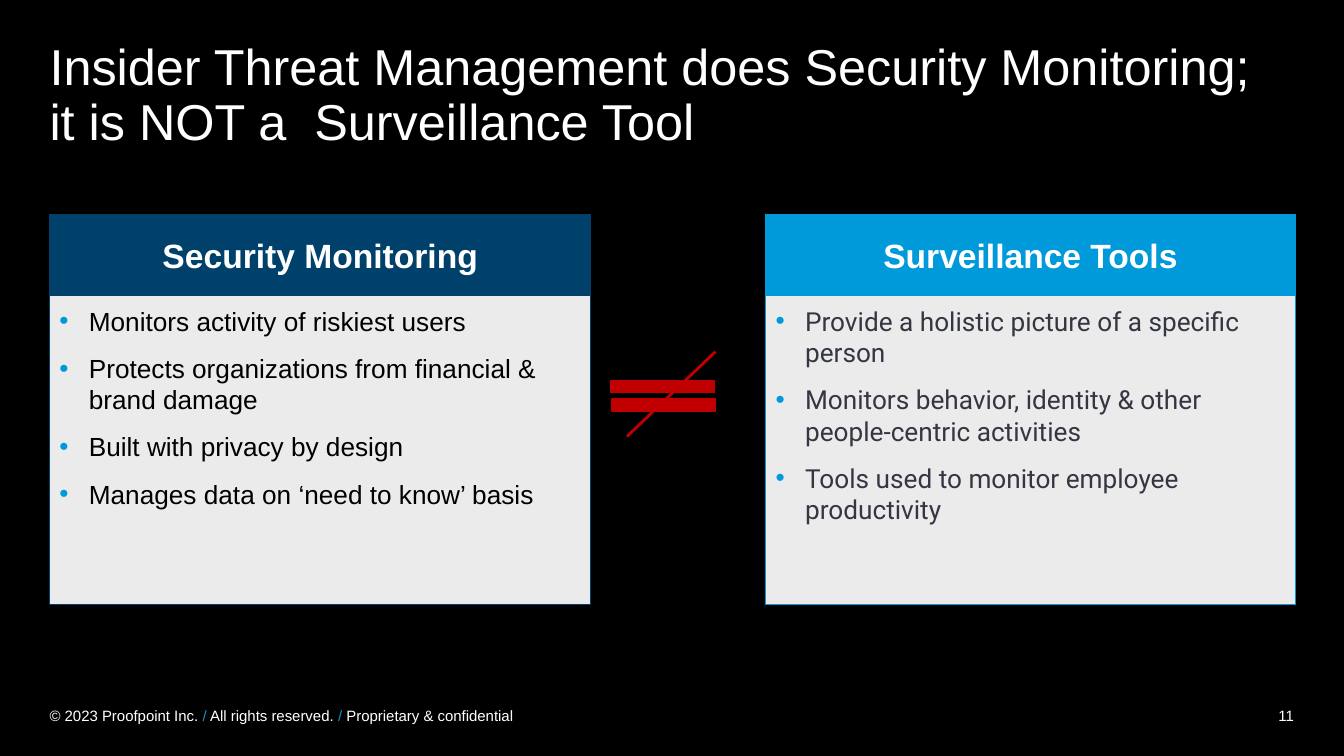
from dataclasses import dataclass

from lxml.etree import SubElement
from pptx import Presentation
from pptx.dml.color import RGBColor
from pptx.enum.shapes import MSO_CONNECTOR as Connector, MSO_SHAPE as Preset
from pptx.enum.text import MSO_ANCHOR as Anchor, PP_ALIGN as Align
from pptx.oxml.ns import qn
from pptx.shapes.autoshape import Shape
from pptx.slide import Slide
from pptx.text.text import TextFrame, _Paragraph as Paragraph
from pptx.util import Cm, Pt

COLORS = {
    "black": "000000",
    "white": "FFFFFF",
    "navy": "00416B",
    "blue": "009ADA",
    "slate": "343741",
    "red": "C00000",
}
MARGIN = 1.25
HEADER_TOP, HEADER_HEIGHT, BODY_HEIGHT = 5.41, 2.03, 7.8
FOOTER_TOP, FOOTER_HEIGHT = 17.73, 0.61
BULLET_INDENT = 0.74
PARAGRAPH_GAP = 11.2


@dataclass(frozen=True)
class Box:
    left: float
    top: float
    width: float
    height: float

    def lengths(self) -> tuple[Cm, Cm, Cm, Cm]:
        return Cm(self.left), Cm(self.top), Cm(self.width), Cm(self.height)


@dataclass(frozen=True)
class TextStyle:
    size: float
    color: str = "white"
    font: str = "Arial"
    bold: bool = False


@dataclass(frozen=True)
class Panel:
    left: float
    width: float
    color: str
    heading: str
    bullets: tuple[str, ...]
    bullet_style: TextStyle


TITLE = TextStyle(36)
HEADING = TextStyle(24, bold=True)
FOOTER = TextStyle(10.7)
FOOTER_ACCENT = TextStyle(10.7, "blue")

PANELS = (
    Panel(MARGIN, 13.64, "navy", "Security Monitoring", (
        "Monitors activity of riskiest users",
        "Protects organizations from financial & brand damage",
        "Built with privacy by design",
        "Manages data on ‘need to know’ basis",
    ), TextStyle(18.7, "black")),
    Panel(19.3, 13.34, "blue", "Surveillance Tools", (
        "Provide a holistic picture of a specific person",
        "Monitors behavior, identity & other people-centric activities",
        "Tools used to monitor employee productivity",
    ), TextStyle(18.7, "slate", "Roboto")),
)
EQUALS_BARS = (Box(15.39, 9.6, 2.62, 0.3), Box(15.42, 10.06, 2.62, 0.3))
FOOTER_RUNS = (
    ("© 2023 Proofpoint Inc. ", FOOTER),
    ("/", FOOTER_ACCENT),
    (" All rights reserved. ", FOOTER),
    ("/ ", FOOTER_ACCENT),
    ("Proprietary & confidential", FOOTER),
)


def rgb(name: str) -> RGBColor:
    return RGBColor.from_string(COLORS[name])


def add_run(paragraph: Paragraph, text: str, style: TextStyle) -> None:
    run = paragraph.add_run()
    run.text = text
    run.font.name = style.font
    run.font.size = Pt(style.size)
    run.font.bold = style.bold
    run.font.color.rgb = rgb(style.color)


def prepare_frame(frame: TextFrame, inset: float, anchor: Anchor) -> None:
    frame.word_wrap = True
    frame.vertical_anchor = anchor
    frame.margin_left = frame.margin_right = Cm(inset)
    frame.margin_top = frame.margin_bottom = Cm(inset)


def add_text(slide: Slide, box: Box, runs: tuple[tuple[str, TextStyle], ...],
             anchor: Anchor = Anchor.MIDDLE, align: Align = Align.LEFT) -> Paragraph:
    frame = slide.shapes.add_textbox(*box.lengths()).text_frame
    prepare_frame(frame, 0, anchor)
    paragraph = frame.paragraphs[0]
    paragraph.alignment = align
    for text, style in runs:
        add_run(paragraph, text, style)
    return paragraph


def add_rectangle(slide: Slide, box: Box, fill: str, line: str, line_width: float) -> Shape:
    shape = slide.shapes.add_shape(Preset.RECTANGLE, *box.lengths())
    shape.shadow.inherit = False
    shape.fill.solid()
    shape.fill.fore_color.rgb = rgb(fill)
    shape.line.color.rgb = rgb(line)
    shape.line.width = Pt(line_width)
    return shape


def set_opacity(shape: Shape, percent: int) -> None:
    color = shape.fill._xPr.find(qn("a:solidFill")).find(qn("a:srgbClr"))
    SubElement(color, qn("a:alpha"), val=str(percent * 1000))


def add_bullet(paragraph: Paragraph) -> None:
    properties = paragraph._p.get_or_add_pPr()
    properties.set("marL", str(Cm(BULLET_INDENT)))
    properties.set("indent", str(-Cm(BULLET_INDENT)))
    bullet_color = SubElement(properties, qn("a:buClr"))
    SubElement(bullet_color, qn("a:srgbClr"), val=COLORS["blue"])
    SubElement(properties, qn("a:buFont"), typeface="Arial")
    SubElement(properties, qn("a:buChar"), char="•")


def add_panel(slide: Slide, panel: Panel) -> None:
    header_box = Box(panel.left, HEADER_TOP, panel.width, HEADER_HEIGHT)
    header = add_rectangle(slide, header_box, panel.color, panel.color, 0.75)
    prepare_frame(header.text_frame, 0, Anchor.MIDDLE)
    heading = header.text_frame.paragraphs[0]
    heading.alignment = Align.CENTER
    add_run(heading, panel.heading, HEADING)

    body_box = Box(panel.left, HEADER_TOP + HEADER_HEIGHT, panel.width, BODY_HEIGHT)
    body = add_rectangle(slide, body_box, "white", panel.color, 0.75)
    set_opacity(body, 92)
    frame = body.text_frame
    prepare_frame(frame, 0.25, Anchor.TOP)
    for index, text in enumerate(panel.bullets):
        paragraph = frame.add_paragraph() if index else frame.paragraphs[0]
        add_bullet(paragraph)
        paragraph.alignment = Align.LEFT
        if index:
            paragraph.space_before = Pt(PARAGRAPH_GAP)
        add_run(paragraph, text, panel.bullet_style)


def add_not_equal_sign(slide: Slide) -> None:
    for bar in EQUALS_BARS:
        add_rectangle(slide, bar, "red", "red", 1)
    slash = slide.shapes.add_connector(
        Connector.STRAIGHT, Cm(15.8), Cm(11), Cm(18.03), Cm(8.86))
    slash.line.color.rgb = rgb("red")
    slash.line.width = Pt(2)
    SubElement(slash._element.spPr, qn("a:effectLst"))


def main() -> None:
    presentation = Presentation()
    presentation.slide_width = Cm(33.87)
    presentation.slide_height = Cm(19.05)
    slide = presentation.slides.add_slide(presentation.slide_layouts[6])
    slide.background.fill.solid()
    slide.background.fill.fore_color.rgb = rgb("black")

    add_text(slide, Box(MARGIN, FOOTER_TOP, 15.67, FOOTER_HEIGHT), FOOTER_RUNS)
    add_text(slide, Box(25.83, FOOTER_TOP, 6.78, FOOTER_HEIGHT),
             (("11", FOOTER),), align=Align.RIGHT)
    for panel in PANELS:
        add_panel(slide, panel)
    title_text = ("Insider Threat Management does Security Monitoring; "
                  "it is NOT a  Surveillance Tool")
    title = add_text(slide, Box(MARGIN, 1.07, 31.09, 2.97),
                     ((title_text, TITLE),), Anchor.TOP)
    title.line_spacing = 0.9
    add_not_equal_sign(slide)
    presentation.save("out.pptx")


if __name__ == "__main__":
    main()
